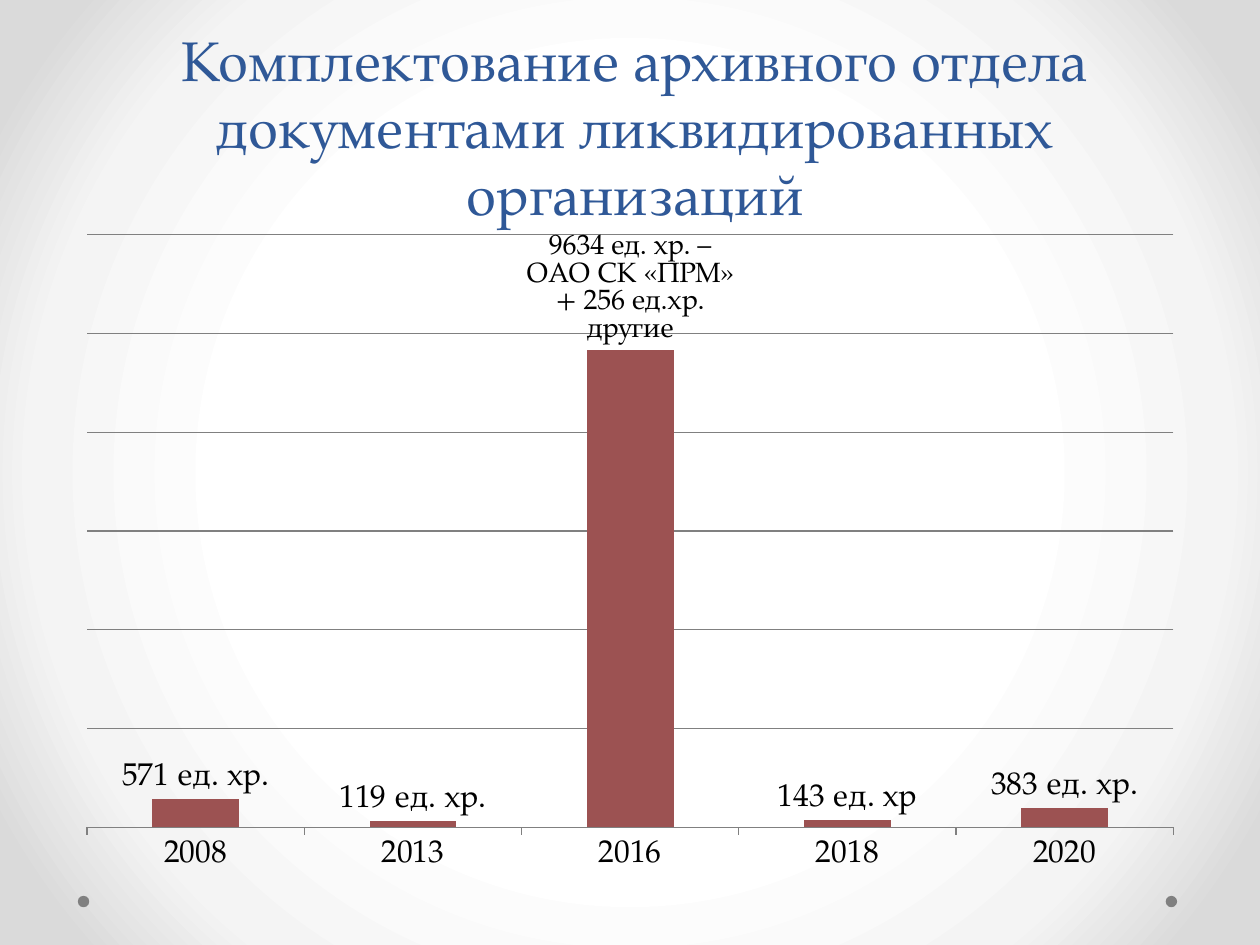
"""Build the slide on archive acquisitions from liquidated organisations."""
from pptx import Presentation
from pptx.chart.data import CategoryChartData
from pptx.dml.color import RGBColor
from pptx.enum.chart import XL_CHART_TYPE, XL_LABEL_POSITION, XL_TICK_LABEL_POSITION, XL_TICK_MARK
from pptx.enum.shapes import MSO_SHAPE
from pptx.enum.text import MSO_ANCHOR, MSO_AUTO_SIZE, PP_ALIGN
from pptx.oxml import parse_xml
from pptx.oxml.ns import nsdecls
from pptx.util import Cm, Pt

COLUMNS = XL_CHART_TYPE.COLUMN_CLUSTERED
ABOVE = XL_LABEL_POSITION.OUTSIDE_END
NO_LABELS = XL_TICK_LABEL_POSITION.NONE
TICK_OUT, TICK_NONE = XL_TICK_MARK.OUTSIDE, XL_TICK_MARK.NONE
OVAL = MSO_SHAPE.OVAL
BOTTOM = MSO_ANCHOR.BOTTOM
NO_FIT = MSO_AUTO_SIZE.NONE
CENTER = PP_ALIGN.CENTER

BLUE = RGBColor(0x2F, 0x58, 0x97)
RED = RGBColor(0x9C, 0x52, 0x52)
GRAY = RGBColor(0x80, 0x80, 0x80)
BLACK = RGBColor(0, 0, 0)
WHITE = RGBColor(0xFF, 0xFF, 0xFF)
PALE = RGBColor(0xF4, 0xF4, 0xF4)
SILVER = RGBColor(0xDA, 0xDA, 0xDA)
FONT = "TeX Gyre Pagella"

ACQUISITIONS = [
    ("2008", 571, "571 ед. хр.", 18),
    ("2013", 119, "119 ед. хр.", 18),
    ("2016", 9660, "9634 ед. хр. – ОАО СК «ПРМ» + 256 ед.хр. другие", 16),
    ("2018", 143, "143 ед. хр", 18),
    ("2020", 383, "383 ед. хр.", 18),
]


def set_font(font, size, color):
    font.name = FONT
    font.size = Pt(size)
    font.bold = False
    font.color.rgb = color


prs = Presentation()
prs.slide_width, prs.slide_height = Cm(25.4), Cm(19.05)
slide = prs.slides.add_slide(prs.slide_layouts[5])

stops = "".join(
    f'<a:gs pos="{percent * 1000}"><a:srgbClr val="{color}"/></a:gs>'
    for percent, color in [(50, WHITE), (76, PALE), (92, SILVER)]
)
slide.element.cSld.insert(0, parse_xml(
    f'<p:bg {nsdecls("p", "a")}><p:bgPr><a:gradFill rotWithShape="1">'
    f'<a:gsLst>{stops}</a:gsLst><a:path path="circle">'
    '<a:fillToRect l="50000" t="50000" r="50000" b="50000"/></a:path>'
    '</a:gradFill><a:effectLst/></p:bgPr></p:bg>'
))

for left in (23.5, 1.57):
    dot = slide.shapes.add_shape(OVAL, Cm(left), Cm(18.06), Cm(0.23), Cm(0.23))
    dot.shadow.inherit = False
    dot.fill.solid()
    dot.fill.fore_color.rgb = GRAY
    dot.line.fill.background()

title = slide.shapes.title
title.left, title.top, title.width, title.height = Cm(1.3), Cm(0.53), Cm(23.01), Cm(4.17)
title.text_frame.text = "Комплектование архивного отдела документами ликвидированных организаций"
title.text_frame.word_wrap = True
title.text_frame.auto_size = NO_FIT
title.text_frame.vertical_anchor = BOTTOM
heading = title.text_frame.paragraphs[0]
heading.alignment = CENTER
set_font(heading.font, 32, BLUE)

holdings = CategoryChartData()
holdings.categories = [year for year, *_ in ACQUISITIONS]
holdings.add_series("Series 1", [units for _, units, *_ in ACQUISITIONS])
chart = slide.shapes.add_chart(
    COLUMNS, Cm(1.3), Cm(4.72), Cm(22.81), Cm(13.59), holdings
).chart
chart.has_legend = False
chart.has_title = False
set_font(chart.font, 18, BLACK)

year_axis = chart.category_axis
year_axis.major_tick_mark = TICK_OUT
year_axis.format.line.color.rgb = GRAY
units_axis = chart.value_axis
units_axis.visible = False
units_axis.minimum_scale, units_axis.maximum_scale, units_axis.major_unit = 0, 12000, 2000
units_axis.major_tick_mark = TICK_NONE
units_axis.tick_label_position = NO_LABELS
units_axis.major_gridlines.format.line.color.rgb = GRAY

plot = chart.plots[0]
plot.gap_width = 150
plot.vary_by_categories = False
plot.has_data_labels = True
plot.data_labels.show_value = True
bars = plot.series[0]
bars.format.fill.solid()
bars.format.fill.fore_color.rgb = RED
bars.data_labels.show_value = True
for point, (_, _, caption, size) in enumerate(ACQUISITIONS):
    label = bars.points[point].data_label
    label.text_frame.text = caption
    label.position = ABOVE
    set_font(label.text_frame.paragraphs[0].runs[0].font, size, BLACK)

plot_area = chart.element.chart.plotArea
for layout in plot_area.findall("{*}layout"):
    plot_area.remove(layout)
plot_area.insert(0, parse_xml(
    f'<c:layout {nsdecls("c")}><c:manualLayout><c:layoutTarget val="inner"/>'
    '<c:xMode val="edge"/><c:yMode val="edge"/><c:x val="0.02"/><c:y val="0"/>'
    '<c:w val="0.96"/><c:h val="0.88"/></c:manualLayout></c:layout>'
))

prs.save("out.pptx")
